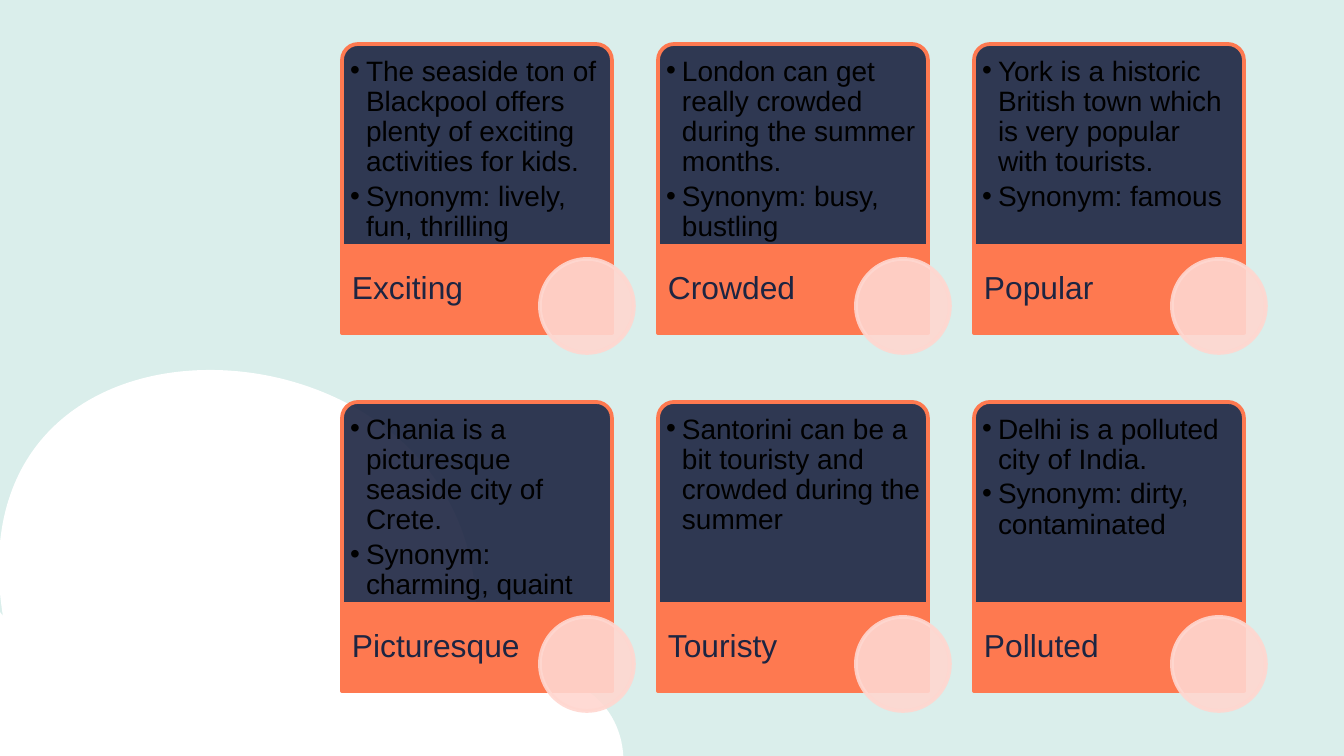
import pptx
import pptx.util
import pptx.dml.color
import pptx.enum.shapes
import pptx.enum.text
import pptx.oxml.ns
import lxml.etree

RGB = pptx.dml.color.RGBColor
MINT = RGB(0xDA, 0xEE, 0xEB)
WHITE = RGB(0xFF, 0xFF, 0xFF)
NAVY = RGB(0x1D, 0x25, 0x42)
CORAL = RGB(0xFE, 0x79, 0x50)
BLUSH = RGB(0xFF, 0xD7, 0xD0)
BLACK = RGB(0, 0, 0)

CARDS = [
    ("Exciting", ["The seaside ton of Blackpool offers plenty of exciting activities for kids.",
                  "Synonym: lively, fun, thrilling"]),
    ("Crowded", ["London can get really crowded during the summer months.",
                 "Synonym: busy, bustling"]),
    ("Popular", ["York is a historic British town which is very popular with tourists.",
                 "Synonym: famous"]),
    ("Picturesque", ["Chania is a picturesque seaside city of Crete.",
                     "Synonym: charming, quaint"]),
    ("Touristy", ["Santorini can be a bit touristy and crowded during the summer"]),
    ("Polluted", ["Delhi is a polluted city of India.",
                  "Synonym: dirty, contaminated"]),
]

CLOUD_START = (210, 370)
CLOUD_SEGMENTS = [
    [(87, 370), (-24, 448), (3, 616)],
    [(-30, 571), (-67, 552), (-103, 552)],
    [(-199, 552), (-286, 677), (-261, 782)],
    [(622, 782)],
    [(633, 714), (586, 672), (521, 672)],
    [(505, 672), (487, 675), (469, 680)],
    [(512, 478), (355, 370), (210, 370)],
]

SLIDE_WIDTH, SLIDE_HEIGHT = 1344, 756
SCALE = 9144000 / SLIDE_WIDTH
COLUMNS = 3
LEFT, TOP = 342, 44
COLUMN_PITCH, ROW_PITCH = 316, 358
CARD_WIDTH, CARD_HEIGHT, BAND_HEIGHT = 270, 202, 87
LABEL_WIDTH, CIRCLE = 191, 94
BULLET_INDENT = 16

SHAPES = pptx.enum.shapes.MSO_SHAPE
ANCHORS = pptx.enum.text.MSO_ANCHOR
qn = pptx.oxml.ns.qn


def px(length):
    return pptx.util.Emu(round(length * SCALE))


def set_alpha(fill_parent, percent):
    alpha = lxml.etree.SubElement(fill_parent.find(qn("a:solidFill"))[0], qn("a:alpha"))
    alpha.set("val", str(percent * 1000))


def add_block(page, preset, bounds, fill, line):
    shape = page.shapes.add_shape(preset, *map(px, bounds))
    shape.shadow.inherit = False
    shape.fill.solid()
    shape.fill.fore_color.rgb = fill
    shape.line.color.rgb = line
    shape.line.width = pptx.util.Pt(2)
    return shape


def add_text(page, bounds, insets, anchor, lines, size, color, gap):
    box = page.shapes.add_textbox(*map(px, bounds))
    frame = box.text_frame
    frame.word_wrap = True
    frame.vertical_anchor = anchor
    frame.margin_left, frame.margin_top, frame.margin_right, frame.margin_bottom = map(px, insets)
    frame.text = "\n".join(lines)
    for para in frame.paragraphs:
        para.font.name = "Arial"
        para.font.size = pptx.util.Pt(size)
        para.font.color.rgb = color
        para.line_spacing = 0.9
        para.space_after = pptx.util.Pt(gap)
    return frame


def add_bullet(para):
    para.level = 1
    properties = para._p.get_or_add_pPr()
    properties.set("marL", str(px(BULLET_INDENT)))
    properties.set("indent", str(-px(BULLET_INDENT)))
    defaults = properties.find(qn("a:defRPr"))
    color = lxml.etree.Element(qn("a:buClr"))
    lxml.etree.SubElement(color, qn("a:srgbClr")).set("val", str(BLACK))
    font = lxml.etree.Element(qn("a:buFont"))
    font.set("typeface", "Arial")
    bullet = lxml.etree.Element(qn("a:buChar"))
    bullet.set("char", "•")
    for element in (color, font, bullet):
        defaults.addprevious(element)


def add_cloud(page):
    builder = page.shapes.build_freeform(*map(px, CLOUD_START))
    points = [tuple(map(px, point)) for segment in CLOUD_SEGMENTS for point in segment]
    builder.add_line_segments(points, close=True)
    cloud = builder.convert_to_shape()
    cloud.shadow.inherit = False
    cloud.fill.solid()
    cloud.fill.fore_color.rgb = WHITE
    cloud.line.fill.background()
    steps = iter(list(cloud._element.iter(qn("a:lnTo"))))
    for segment in CLOUD_SEGMENTS:
        group = [next(steps) for _ in segment]
        if len(group) == 3:
            curve = lxml.etree.Element(qn("a:cubicBezTo"))
            group[0].addprevious(curve)
            for step in group:
                curve.append(step[0])
                step.getparent().remove(step)


def add_card(page, left, top, label, lines):
    band_top = top + CARD_HEIGHT
    panel = add_block(page, SHAPES.ROUND_2_SAME_RECTANGLE,
                      (left, top, CARD_WIDTH, CARD_HEIGHT), NAVY, CORAL)
    panel.adjustments[0] = 0.08
    panel.adjustments[1] = 0
    set_alpha(panel._element.spPr, 90)
    frame = add_text(page, (left + 5, top + 5, CARD_WIDTH - 9, CARD_HEIGHT - 4), (3, 8, 3, 3),
                     ANCHORS.TOP, lines, 15, BLACK, 2.25)
    for para in frame.paragraphs:
        add_bullet(para)
    add_block(page, SHAPES.RECTANGLE, (left, band_top, CARD_WIDTH, BAND_HEIGHT), CORAL, CORAL)
    add_text(page, (left, band_top, LABEL_WIDTH, BAND_HEIGHT), (10, 0, 3, 0),
             ANCHORS.MIDDLE, [label], 17, NAVY, 0)
    circle = add_block(page, SHAPES.OVAL, (left + 198, band_top + 13, CIRCLE, CIRCLE), BLUSH, BLUSH)
    set_alpha(circle._element.spPr, 90)
    set_alpha(circle._element.spPr.find(qn("a:ln")), 90)


def main():
    deck = pptx.Presentation()
    deck.slide_width, deck.slide_height = px(SLIDE_WIDTH), px(SLIDE_HEIGHT)
    page = deck.slides.add_slide(deck.slide_layouts[6])
    page.background.fill.solid()
    page.background.fill.fore_color.rgb = MINT
    add_cloud(page)
    for index, (label, lines) in enumerate(CARDS):
        row, column = divmod(index, COLUMNS)
        add_card(page, LEFT + column * COLUMN_PITCH, TOP + row * ROW_PITCH, label, lines)
    deck.save("out.pptx")


if __name__ == "__main__":
    main()
